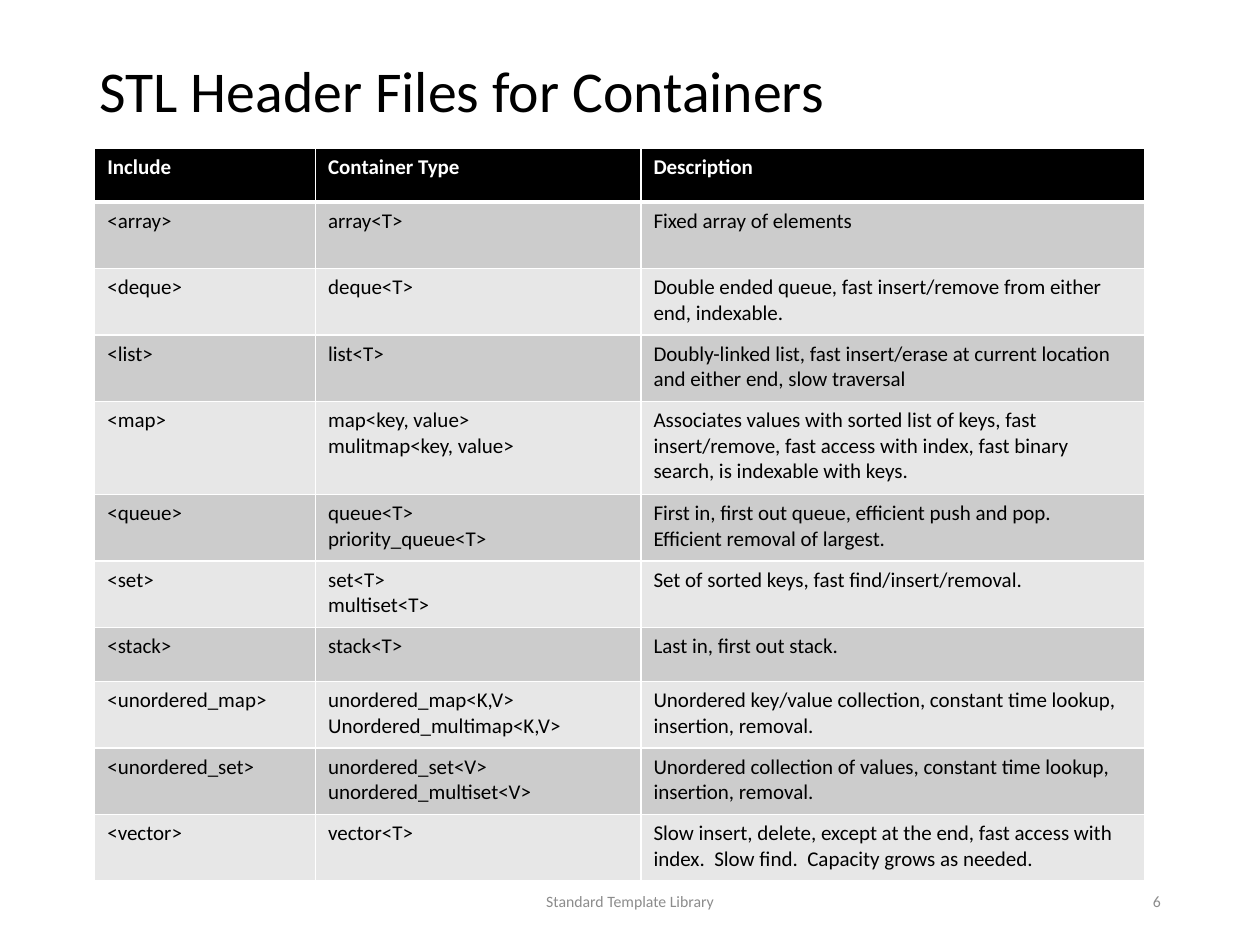
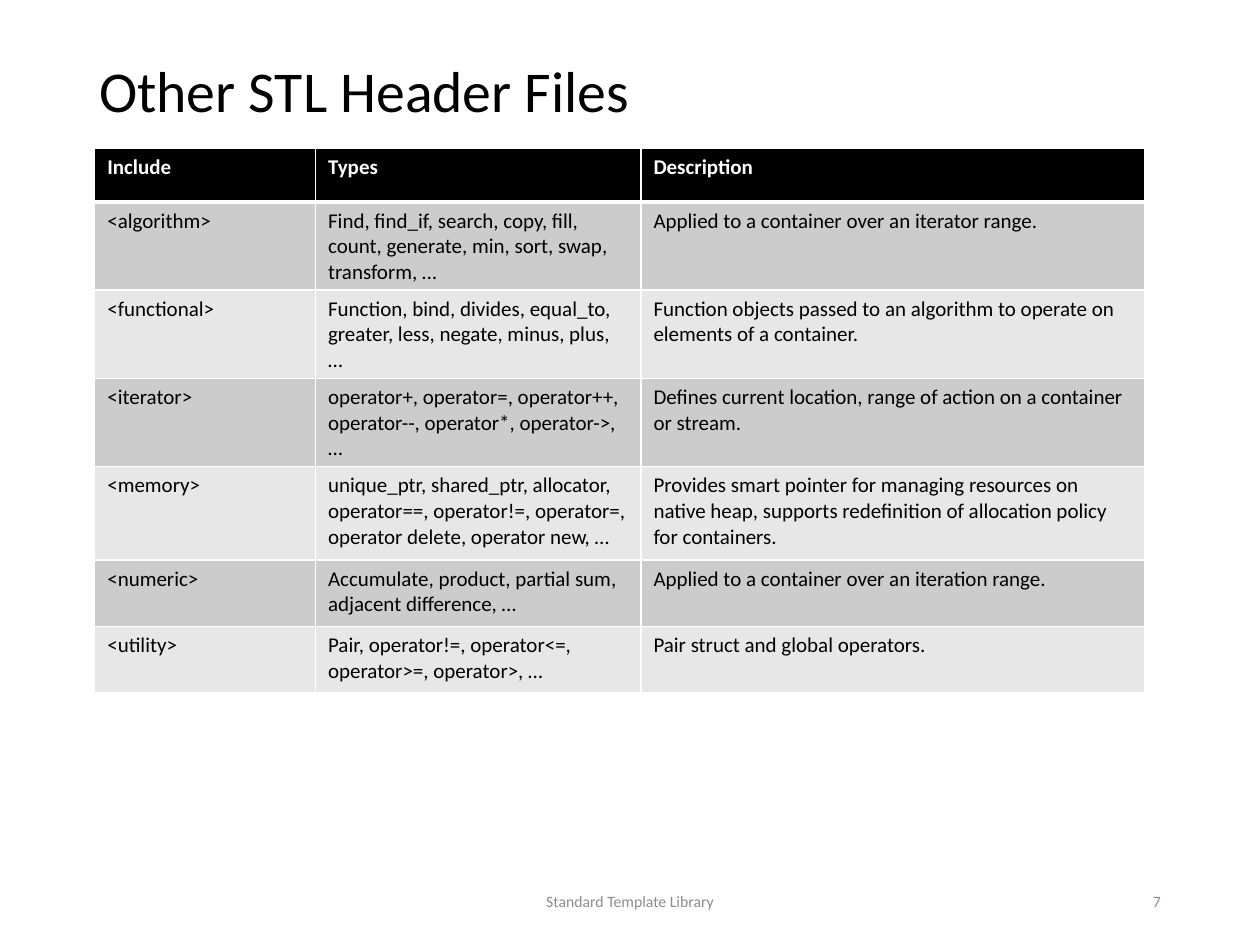
from lxml.etree import SubElement
from pptx import Presentation
from pptx.dml.color import RGBColor
from pptx.enum.text import MSO_ANCHOR, PP_ALIGN
from pptx.oxml.ns import qn
from pptx.util import Cm, Pt

BLACK = RGBColor(0x00, 0x00, 0x00)
WHITE = RGBColor(0xFF, 0xFF, 0xFF)
FOOTER_GREY = RGBColor(0x8C, 0x8C, 0x8C)
DARK_BAND = RGBColor(0xCC, 0xCC, 0xCC)
LIGHT_BAND = RGBColor(0xE7, 0xE7, 0xE7)
FONT = "Calibri"

COLUMN_WIDTHS = [4.45, 6.56, 10.16]
HEADER_HEIGHT = 1.09
ROW_HEIGHT = 1.34
SPECIAL_HEIGHTS = {"<map>": 1.88, "<memory>": 1.88, "<stack>": 1.09}
FIRST_PAGE_NUMBER = 6
FOOTER = "Standard Template Library"

PAGES = [
    ("STL Header Files for Containers", [
        ("Include", "Container Type", "Description"),
        ("<array>", "array<T>", "Fixed array of elements"),
        ("<deque>", "deque<T>", "Double ended queue, fast insert/remove from either end, indexable."),
        ("<list>", "list<T>",
         "Doubly-linked list, fast insert/erase at current location and either end, slow traversal"),
        ("<map>", "map<key, value>\nmulitmap<key, value>",
         "Associates values with sorted list of keys, fast insert/remove, "
         "fast access with index, fast binary search, is indexable with keys."),
        ("<queue>", "queue<T>\npriority_queue<T>",
         "First in, first out queue, efficient push and pop.\nEfficient removal of largest."),
        ("<set>", "set<T>\nmultiset<T>", "Set of sorted keys, fast find/insert/removal."),
        ("<stack>", "stack<T>", "Last in, first out stack."),
        ("<unordered_map>", "unordered_map<K,V>\nUnordered_multimap<K,V>",
         "Unordered key/value collection, constant time lookup, insertion, removal."),
        ("<unordered_set>", "unordered_set<V>\nunordered_multiset<V>",
         "Unordered collection of values, constant time lookup, insertion, removal."),
        ("<vector>", "vector<T>",
         "Slow insert, delete, except at the end, fast access with index.  "
         "Slow find.  Capacity grows as needed."),
    ]),
    ("Other STL Header Files", [
        ("Include", "Types", "Description"),
        ("<algorithm>",
         "Find, find_if, search, copy, fill, count, generate, min, sort, swap, transform, …",
         "Applied to a container over an iterator range."),
        ("<functional>",
         "Function, bind, divides, equal_to, greater, less, negate, minus, plus, …",
         "Function objects passed to an algorithm to operate on elements of a container."),
        ("<iterator>",
         "operator+, operator=, operator++, operator--, operator*, operator->, …",
         "Defines current location, range of action on a container or stream."),
        ("<memory>",
         "unique_ptr, shared_ptr, allocator, operator==, operator!=, operator=, "
         "operator delete, operator new, …",
         "Provides smart pointer for managing resources on native heap, "
         "supports redefinition of allocation policy for containers."),
        ("<numeric>", "Accumulate, product, partial sum, adjacent difference, …",
         "Applied to a container over an iteration range."),
        ("<utility>", "Pair, operator!=, operator<=, operator>=, operator>, …",
         "Pair struct and global operators."),
    ]),
]


def format_text(frame, size, color, bold=False):
    for para in frame.paragraphs:
        for span in para.runs:
            span.font.name = FONT
            span.font.size = Pt(size)
            span.font.bold = bold
            span.font.color.rgb = color


def add_border(cell, side, width):
    line = SubElement(cell._tc.get_or_add_tcPr(), qn(f"a:ln{side}"), w=str(Pt(width)))
    fill = SubElement(line, qn("a:solidFill"))
    SubElement(fill, qn("a:srgbClr"), val=str(WHITE))


deck = Presentation()
deck.slide_width = Cm(25.4)
deck.slide_height = Cm(19.05)

for page_number, (title, rows) in enumerate(PAGES, FIRST_PAGE_NUMBER):
    page = deck.slides.add_slide(deck.slide_layouts[6])

    for text, left, top, width, height, size, color, alignment, spacing in [
        (title, 1.75, 1.02, 21.9, 1.73, 33, BLACK, PP_ALIGN.LEFT, 0.9),
        (FOOTER, 8.41, 17.65, 8.58, 1.02, 9, FOOTER_GREY, PP_ALIGN.CENTER, 1.0),
        (str(page_number), 17.93, 17.65, 5.72, 1.02, 9, FOOTER_GREY, PP_ALIGN.RIGHT, 1.0),
    ]:
        box = page.shapes.add_textbox(Cm(left), Cm(top), Cm(width), Cm(height))
        frame = box.text_frame
        frame.text = text
        frame.word_wrap = True
        frame.vertical_anchor = MSO_ANCHOR.MIDDLE
        frame.paragraphs[0].alignment = alignment
        frame.paragraphs[0].line_spacing = spacing
        format_text(frame, size, color)

    heights = [HEADER_HEIGHT] + [SPECIAL_HEIGHTS.get(row[0], ROW_HEIGHT) for row in rows[1:]]
    table = page.shapes.add_table(
        len(rows), len(COLUMN_WIDTHS), Cm(1.91), Cm(2.98),
        Cm(sum(COLUMN_WIDTHS)), Cm(sum(heights))).table
    for column, width in zip(table.columns, COLUMN_WIDTHS):
        column.width = Cm(width)

    for row_index, (row, height) in enumerate(zip(rows, heights)):
        table.rows[row_index].height = Cm(height)
        is_header = row_index == 0
        band = BLACK if is_header else DARK_BAND if row_index % 2 else LIGHT_BAND
        for column_index, text in enumerate(row):
            cell = table.cell(row_index, column_index)
            cell.text = text
            format_text(cell.text_frame, 12, WHITE if is_header else BLACK, is_header)
            for side in "LRTB":
                under_header = (row_index, side) in [(0, "B"), (1, "T")]
                add_border(cell, side, 3 if under_header else 1)
            cell.fill.solid()
            cell.fill.fore_color.rgb = band

deck.save("out.pptx")
